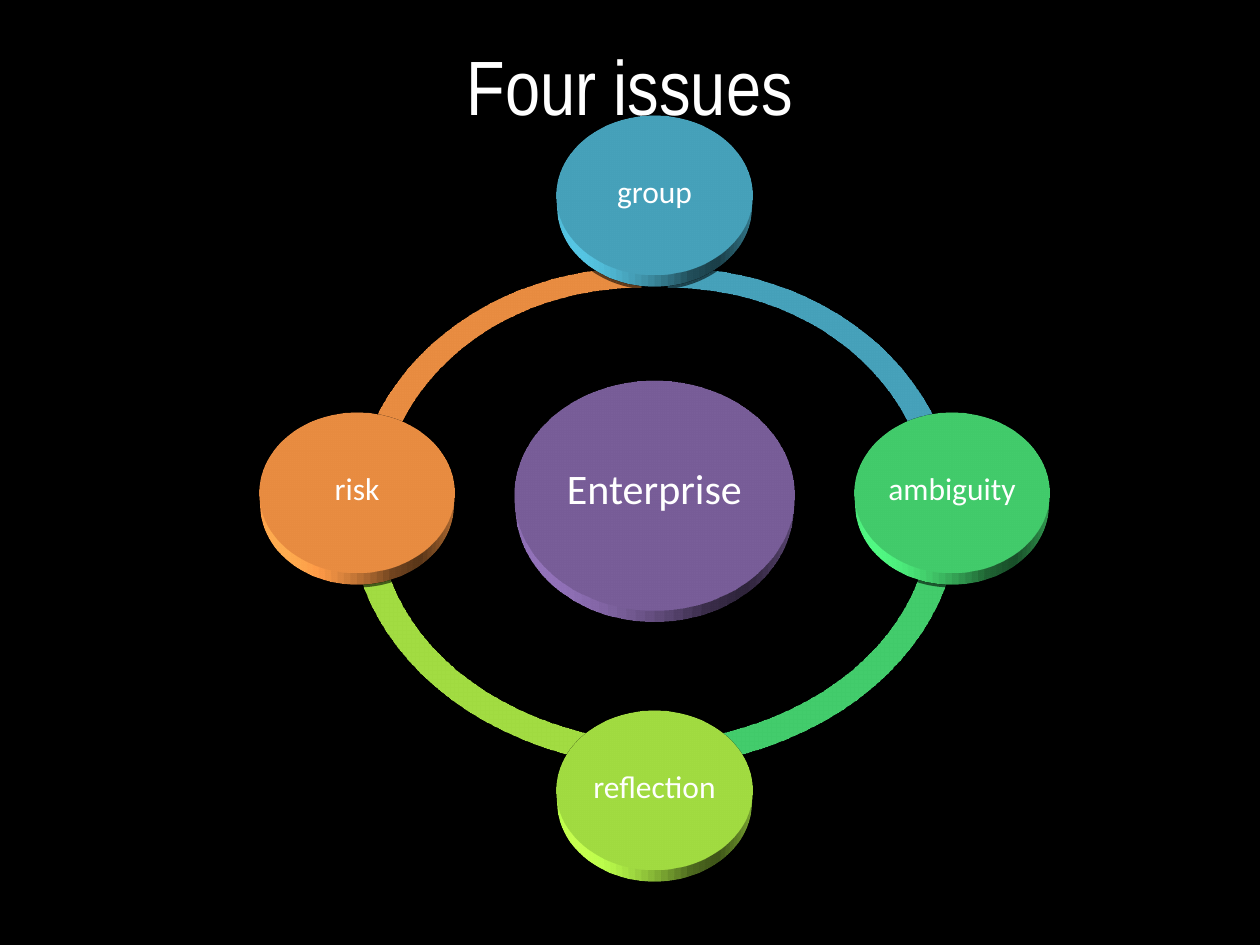
from dataclasses import dataclass

from lxml.etree import fromstring
from pptx import Presentation
from pptx.dml.color import RGBColor as RGB
from pptx.enum.shapes import MSO_SHAPE as Kind
from pptx.enum.text import MSO_ANCHOR as Anchor, PP_ALIGN as Align
from pptx.util import Pt

NS = "http://schemas.openxmlformats.org/drawingml/2006/main"


@dataclass(frozen=True)
class Theme:
    back: str = "000000"
    text: str = "FFFFFF"
    hub: str = "8064A2"
    blue: str = "4BACC6"
    green: str = "47D872"
    lime: str = "ACE946"
    orange: str = "F79646"
    head_font: str = "Arial Narrow"
    body_font: str = "Calibri"
    head_size: int = 44
    hub_size: int = 24
    node_size: int = 18


T = Theme()
MID_X, MID_Y = 374, 280.3
ORBIT = 170
RING, HUB, NODE = 348, 160, 111.6
BAND = 0.046

# label, colour, direction from the centre, arc start and end in 100000 units
ISSUES = [
    ("group", T.blue, (0, -1), (162, 0)),
    ("ambiguity", T.green, (1, 0), (0, 54)),
    ("reflection", T.lime, (0, 1), (54, 108)),
    ("risk", T.orange, (-1, 0), (108, 162)),
]

SCENE = f"""<a:scene3d xmlns:a="{NS}">
<a:camera prst="perspectiveRelaxedModerately" zoom="92000"/>
<a:lightRig rig="balanced" dir="t"><a:rot lat="0" lon="0" rev="12700000"/></a:lightRig>
</a:scene3d>"""
DISC_DEPTH = f'<a:sp3d xmlns:a="{NS}" extrusionH="152250" prstMaterial="matte"/>'
ARC_DEPTH = f'<a:sp3d xmlns:a="{NS}" z="-227350" prstMaterial="matte"/>'
SHADOW = f"""<a:outerShdw xmlns:a="{NS}" blurRad="40000" dist="23000" dir="5400000" rotWithShape="0">
<a:srgbClr val="000000"><a:alpha val="35000"/></a:srgbClr></a:outerShdw>"""


def square(x, y, size):
    """Box of a square centred on x, y."""
    return Pt(x - size / 2), Pt(y - size / 2), Pt(size), Pt(size)


def add_solid(slide, kind, box, color, depth):
    """Add a tilted shape without outline."""
    shape = slide.shapes.add_shape(kind, *box)
    shape.shadow.inherit = False
    shape.fill.solid()
    shape.fill.fore_color.rgb = RGB.from_string(color)
    shape.line.fill.background()
    props = shape._element.spPr
    props.append(fromstring(SCENE))
    props.append(fromstring(depth))
    return shape


def add_text(slide, box, words, font, size, inset, spacing=1.0):
    frame = slide.shapes.add_textbox(*box).text_frame
    frame.word_wrap = True
    frame.vertical_anchor = Anchor.MIDDLE
    frame.margin_left = frame.margin_right = Pt(inset)
    frame.margin_top = frame.margin_bottom = Pt(inset)
    frame.text = words
    par = frame.paragraphs[0]
    par.alignment = Align.CENTER
    par.line_spacing = spacing
    face = par.runs[0].font
    face.name, face.size = font, Pt(size)
    face.color.rgb = RGB.from_string(T.text)


def add_arc(slide, color, ends):
    box = square(MID_X, MID_Y, RING)
    arc = add_solid(slide, Kind.BLOCK_ARC, box, color, ARC_DEPTH)
    for i, value in enumerate((*ends, BAND)):
        arc.adjustments[i] = value


def add_disc(slide, x, y, size, color, words, type_size):
    box = square(x, y, size)
    disc = add_solid(slide, Kind.OVAL, box, color, DISC_DEPTH)
    effects = disc._element.spPr.find(f"{{{NS}}}effectLst")
    effects.append(fromstring(SHADOW))
    add_text(slide, box, words, T.body_font, type_size, 2, 0.9)


def main():
    deck = Presentation()
    deck.slide_width, deck.slide_height = Pt(720), Pt(540)
    slide = deck.slides.add_slide(deck.slide_layouts[6])
    slide.background.fill.solid()
    slide.background.fill.fore_color.rgb = RGB.from_string(T.back)

    head = Pt(36), Pt(3.6), Pt(648), Pt(90)
    add_text(slide, head, "Four issues", T.head_font, T.head_size, 3.6)
    for _, color, _, ends in reversed(ISSUES):
        add_arc(slide, color, ends)
    add_disc(slide, MID_X, MID_Y, HUB, T.hub, "Enterprise", T.hub_size)
    for words, color, (dx, dy), _ in ISSUES:
        x, y = MID_X + dx * ORBIT, MID_Y + dy * ORBIT
        add_disc(slide, x, y, NODE, color, words, T.node_size)

    deck.save("out.pptx")


if __name__ == "__main__":
    main()
